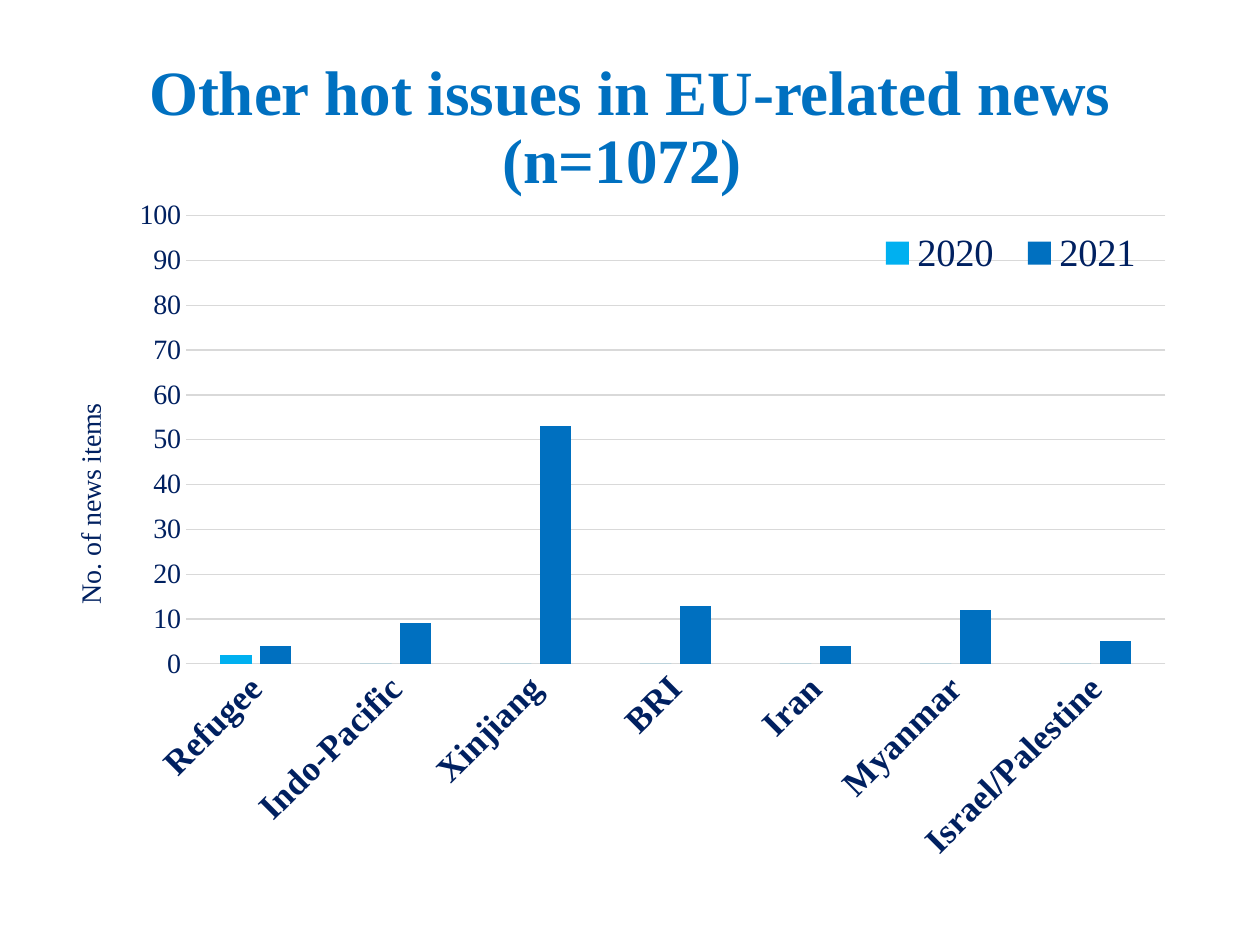
from dataclasses import dataclass

from lxml.etree import SubElement
from pptx import Presentation
from pptx.chart.data import CategoryChartData
from pptx.dml.color import RGBColor
from pptx.enum.chart import XL_CHART_TYPE, XL_LEGEND_POSITION, XL_TICK_MARK
from pptx.enum.text import MSO_ANCHOR, MSO_AUTO_SIZE, PP_ALIGN
from pptx.oxml.ns import qn
from pptx.util import Inches, Pt

NAVY = RGBColor(0x00, 0x20, 0x60)
BLUE = RGBColor(0x00, 0x70, 0xC0)
SKY = RGBColor(0x00, 0xB0, 0xF0)
GREY = RGBColor(0xD9, 0xD9, 0xD9)
FONT = "Times New Roman"

ISSUES = ("Refugee", "Indo-Pacific", "Xinjiang", "BRI", "Iran", "Myanmar",
          "Israel/Palestine")


@dataclass(frozen=True)
class YearSeries:
    name: str
    counts: tuple[int, ...]
    color: RGBColor


YEARS = (
    YearSeries("2020", (2, 0, 0, 0, 0, 0, 0), SKY),
    YearSeries("2021", (4, 9, 53, 13, 4, 12, 5), BLUE),
)


def set_all(target, formats: dict) -> None:
    for name, value in formats.items():
        setattr(target, name, value)


def format_font(font, size: int, color: RGBColor, bold: bool = False) -> None:
    set_all(font, {"name": FONT, "size": Pt(size), "bold": bold})
    font.color.rgb = color


def format_line(line, color: RGBColor) -> None:
    line.color.rgb = color
    line.width = Pt(0.75)


def place(element, index: int, **shares: float) -> None:
    """Give a chart part a manual layout in shares of the chart's size."""
    for old in element.findall(qn("c:layout")):
        element.remove(old)
    layout = SubElement(element, qn("c:layout"))
    element.insert(index, layout)
    manual = SubElement(layout, qn("c:manualLayout"))
    settings = {"xMode": "edge", "yMode": "edge", **shares}
    if element.tag == qn("c:plotArea"):
        settings = {"layoutTarget": "inner", **settings}
    for name, value in settings.items():
        SubElement(manual, qn(f"c:{name}")).set("val", str(value))


def rotate(body, degrees: int) -> None:
    body.set("rot", str(degrees * 60000))
    body.set("vert", "horz")


def add_title(slide) -> None:
    title = slide.shapes.title
    set_all(title, {"left": Inches(0.69), "top": Inches(0.63),
                    "width": Inches(8.62), "height": Inches(0.79)})
    frame = title.text_frame
    set_all(frame, {"word_wrap": True, "auto_size": MSO_AUTO_SIZE.NONE,
                    "vertical_anchor": MSO_ANCHOR.MIDDLE})
    para = frame.paragraphs[0]
    set_all(para, {"alignment": PP_ALIGN.CENTER, "line_spacing": 0.9})
    span = para.add_run()
    span.text = "Other hot issues in EU-related news (n=1072) "
    format_font(span.font, 36, BLUE, bold=True)


def format_axes(chart) -> None:
    issues, counts = chart.category_axis, chart.value_axis
    for axis in (issues, counts):
        set_all(axis, {"major_tick_mark": XL_TICK_MARK.NONE,
                       "minor_tick_mark": XL_TICK_MARK.NONE})
    format_font(issues.tick_labels.font, 20, NAVY, bold=True)
    format_font(counts.tick_labels.font, 16, NAVY)
    format_line(issues.format.line, GREY)
    rotate(issues.tick_labels.font._element.getparent().getparent()
           .getparent().find(qn("a:bodyPr")), -45)

    set_all(counts, {"minimum_scale": 0, "maximum_scale": 100,
                     "major_unit": 10, "has_major_gridlines": True})
    counts.format.line.fill.background()
    format_line(counts.major_gridlines.format.line, GREY)

    frame = counts.axis_title.text_frame
    span = frame.paragraphs[0].add_run()
    span.text = "No. of news items"
    format_font(span.font, 16, NAVY)
    rotate(frame._txBody.find(qn("a:bodyPr")), -90)
    place(counts.axis_title._element, 1, x=0.02, y=0.31)


def add_issue_chart(slide) -> None:
    data = CategoryChartData()
    data.categories = ISSUES
    for year in YEARS:
        data.add_series(year.name, year.counts)
    chart = slide.shapes.add_chart(
        XL_CHART_TYPE.COLUMN_CLUSTERED, Inches(0.35), Inches(1.42),
        Inches(9.3), Inches(5.62), data).chart
    format_font(chart.font, 16, NAVY)
    set_all(chart, {"has_title": False, "has_legend": True})

    plot = chart.plots[0]
    set_all(plot, {"gap_width": 219, "overlap": -27,
                   "vary_by_categories": False})
    for series, year in zip(plot.series, YEARS):
        series.format.fill.solid()
        series.format.fill.fore_color.rgb = year.color
    place(chart._chartSpace.chart.plotArea, 0,
          x=0.121, y=0.052, w=0.836, h=0.633)
    format_axes(chart)

    legend = chart.legend
    set_all(legend, {"position": XL_LEGEND_POSITION.TOP,
                     "include_in_layout": False})
    format_font(legend.font, 22, NAVY)
    place(legend._element, 1, x=0.7, y=0.06, w=0.25, h=0.09)


def main() -> None:
    deck = Presentation()
    set_all(deck, {"slide_width": Inches(10), "slide_height": Inches(7.5)})
    slide = deck.slides.add_slide(deck.slide_layouts.get_by_name("Title Only"))
    add_title(slide)
    add_issue_chart(slide)
    deck.save("out.pptx")


if __name__ == "__main__":
    main()
